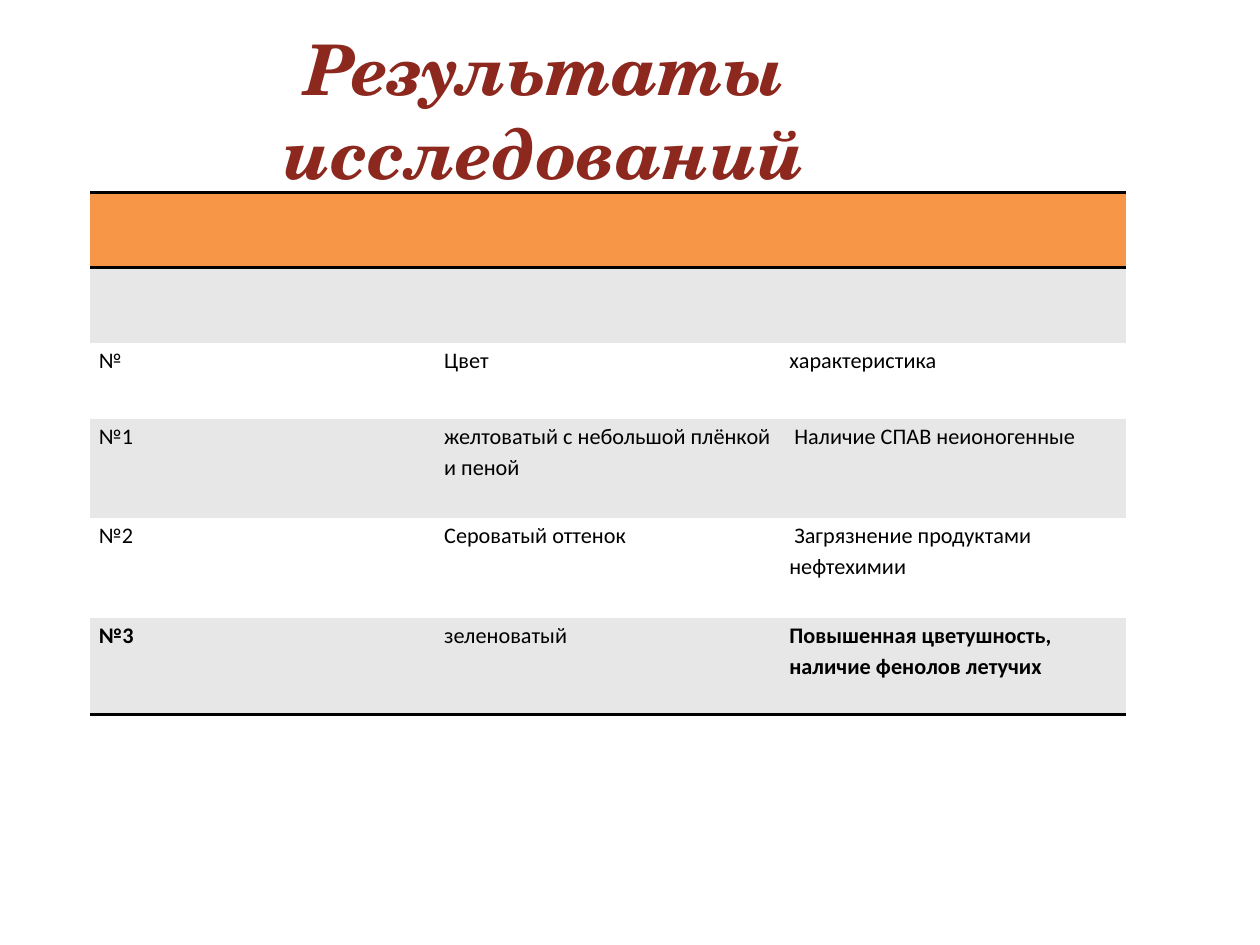
from dataclasses import dataclass

from lxml import etree
from pptx import Presentation
from pptx.dml.color import RGBColor
from pptx.enum import text as t
from pptx.oxml import ns
from pptx.util import Cm, Pt


@dataclass(frozen=True)
class Theme:
    title_font: str = "TeX Gyre Schola"
    body_font: str = "Calibri"
    title_size: int = 44
    body_size: int = 14
    title: str = "8D281E"
    ink: str = "000000"
    header: str = "F79646"
    bands: tuple = ("FFFFFF", "E7E7E7")
    rule_width: int = 2


THEME = Theme()
PLAIN_TABLE = "{2D5ABB26-0587-4C30-8999-92F81FD0307C}"
COLUMN_WIDTH = 7.67
ROW_HEIGHTS = (1.68, 1.68, 1.68, 2.21, 2.21, 2.15)
ROWS = (
    ("", "", ""),
    ("", "", ""),
    ("№", "Цвет", "характеристика"),
    ("№1", "желтоватый с небольшой плёнкой и пеной", "Наличие СПАВ неионогенные"),
    ("№2", "Сероватый оттенок", "Загрязнение продуктами нефтехимии"),
    ("№3", "зеленоватый", "Повышенная цветушность, наличие фенолов летучих"),
)
BOLD_CELLS = {(5, 0), (5, 2)}
INDENTED_CELLS = {(3, 2), (4, 2)}


def write(tf, content, font=THEME.body_font, size=THEME.body_size, color=THEME.ink,
          bold=False, italic=False, align=t.PP_ALIGN.LEFT, spacing=1.0, indent=0):
    p = tf.paragraphs[0]
    p.alignment = align
    p.line_spacing = spacing
    if indent:
        p._p.get_or_add_pPr().set("indent", str(Cm(indent)))
    r = p.add_run()
    r.text = content
    r.font.name = font
    r.font.size = Pt(size)
    r.font.bold = bold
    r.font.italic = italic
    r.font.color.rgb = RGBColor.from_string(color)


def add_title(s, content):
    tf = s.shapes.add_textbox(Cm(1.4), Cm(0.84), Cm(21.41), Cm(3.18)).text_frame
    tf.word_wrap = True
    tf.vertical_anchor = t.MSO_ANCHOR.MIDDLE
    tf.margin_left = tf.margin_right = tf.margin_top = tf.margin_bottom = 0
    write(tf, content, font=THEME.title_font, size=THEME.title_size,
          color=THEME.title, bold=True, italic=True, align=t.PP_ALIGN.CENTER)


def add_border(cell, side):
    ln = etree.SubElement(cell._tc.get_or_add_tcPr(), ns.qn(f"a:ln{side}"),
                          w=str(Pt(THEME.rule_width)))
    fill = etree.SubElement(ln, ns.qn("a:solidFill"))
    etree.SubElement(fill, ns.qn("a:srgbClr"), val=THEME.ink)


def format_cell(cell, row, col):
    cell.margin_left = cell.margin_right = Cm(0.19)
    cell.margin_top = cell.margin_bottom = 0
    if row == 0:
        add_border(cell, "T")
    if row in (0, len(ROWS) - 1):
        add_border(cell, "B")
    cell.fill.solid()
    fill = THEME.header if row == 0 else THEME.bands[row % 2]
    cell.fill.fore_color.rgb = RGBColor.from_string(fill)
    if ROWS[row][col]:
        write(cell.text_frame, ROWS[row][col], spacing=1.15,
              bold=(row, col) in BOLD_CELLS,
              indent=0.11 if (row, col) in INDENTED_CELLS else 0)


def add_results(s):
    columns = len(ROWS[0])
    table = s.shapes.add_table(len(ROWS), columns, Cm(2.01), Cm(4.27),
                               Cm(COLUMN_WIDTH * columns), Cm(sum(ROW_HEIGHTS))).table
    table.first_row = table.horz_banding = False
    table._tbl.tblPr.find(ns.qn("a:tableStyleId")).text = PLAIN_TABLE
    for column in table.columns:
        column.width = Cm(COLUMN_WIDTH)
    for row, height in enumerate(ROW_HEIGHTS):
        table.rows[row].height = Cm(height)
        for col in range(columns):
            format_cell(table.cell(row, col), row, col)


def main():
    prs = Presentation()
    prs.slide_width, prs.slide_height = Cm(28), Cm(21)
    s = prs.slides.add_slide(prs.slide_layouts[6])
    add_title(s, "Результаты исследований")
    add_results(s)
    prs.save("out.pptx")


if __name__ == "__main__":
    main()
